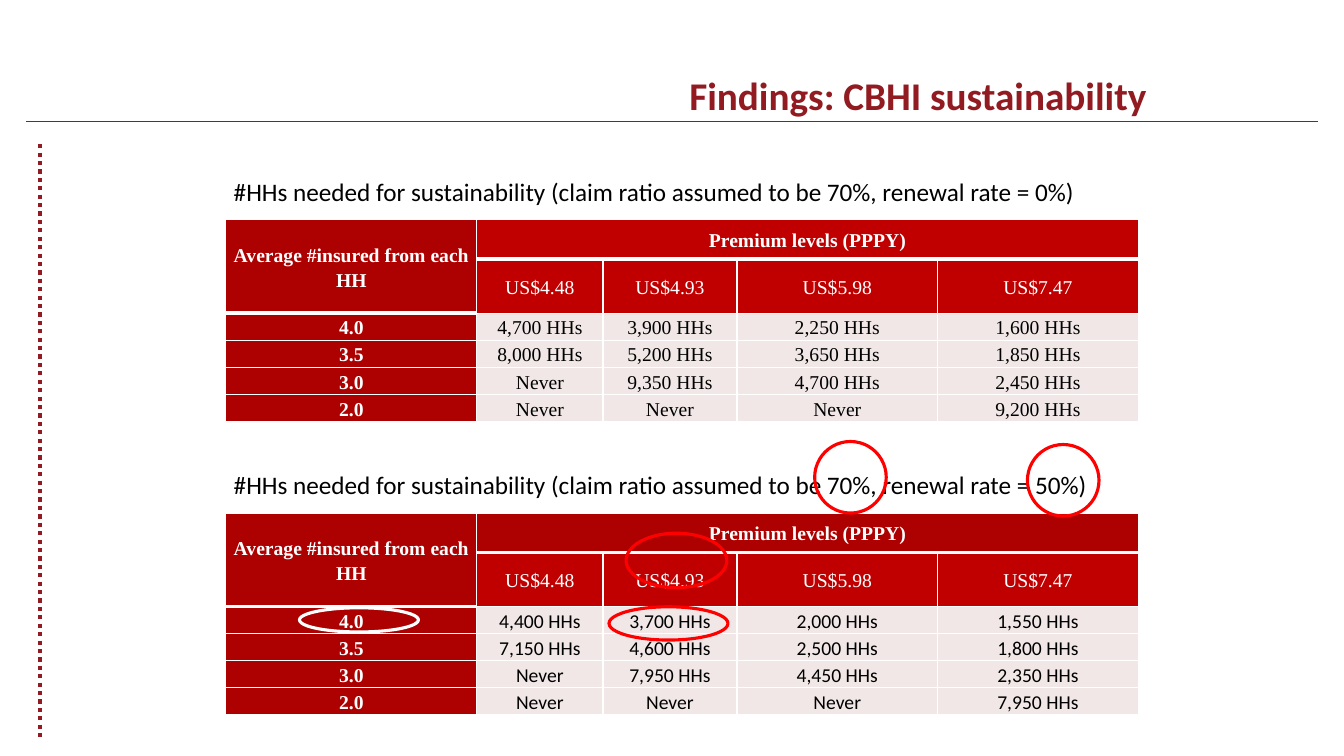
import pptx
import pptx.dml.color
import pptx.enum.dml
import pptx.enum.shapes
import pptx.enum.text
import pptx.oxml
import pptx.oxml.ns
import pptx.oxml.xmlchemy
import pptx.util

Inches = pptx.util.Inches
Pt = pptx.util.Pt
ALIGN = pptx.enum.text.PP_ALIGN
MIDDLE = pptx.enum.text.MSO_ANCHOR.MIDDLE

COLORS = {
    "title": "921B21",
    "label": "AD0101",
    "header": "C00000",
    "body": "F1E7E7",
    "white": "FFFFFF",
    "black": "000000",
    "mark": "FF0000",
}
COLUMN_WIDTHS = [2.49, 1.25, 1.33, 1.99, 1.99]
ROW_HEIGHTS = [0.39, 0.28] + [0.2] * 4
PREMIUMS = ["US$4.48", "US$4.93", "US$5.98", "US$7.47"]
NO_RENEWAL_ROWS = [
    ["4.0", "4,700 HHs", "3,900 HHs", "2,250 HHs", "1,600 HHs"],
    ["3.5", "8,000 HHs", "5,200 HHs", "3,650 HHs", "1,850 HHs"],
    ["3.0", "Never", "9,350 HHs", "4,700 HHs", "2,450 HHs"],
    ["2.0", "Never", "Never", "Never", "9,200 HHs"],
]
HALF_RENEWAL_ROWS = [
    ["4.0", "4,400 HHs", "3,700 HHs", "2,000 HHs", "1,550 HHs"],
    ["3.5", "7,150 HHs", "4,600 HHs", "2,500 HHs", "1,800 HHs"],
    ["3.0", "Never", "7,950 HHs", "4,450 HHs", "2,350 HHs"],
    ["2.0", "Never", "Never", "Never", "7,950 HHs"],
]


def rgb(name):
    return pptx.dml.color.RGBColor.from_string(COLORS[name])


def set_font(paragraph, name, size, color, bold=False):
    paragraph.font.name = name
    paragraph.font.size = Pt(size)
    paragraph.font.color.rgb = rgb(color)
    paragraph.font.bold = bold


def add_rule(slide, start, end, width, dash=None):
    rule = slide.shapes.add_connector(
        pptx.enum.shapes.MSO_CONNECTOR.STRAIGHT,
        *[Inches(value) for value in start + end])
    rule.line.color.rgb = rgb("title")
    rule.line.width = Pt(width)
    if dash is not None:
        rule.line.dash_style = dash
    rule._element.spPr.append(pptx.oxml.xmlchemy.OxmlElement("a:effectLst"))


def add_title(slide, left, top, width, height):
    title = slide.shapes.title
    title.left, title.top = Inches(left), Inches(top)
    title.width, title.height = Inches(width), Inches(height)
    title.text_frame.text = "Findings: CBHI sustainability"
    title.text_frame.vertical_anchor = pptx.enum.text.MSO_ANCHOR.BOTTOM
    paragraph = title.text_frame.paragraphs[0]
    paragraph.alignment = ALIGN.RIGHT
    set_font(paragraph, "Calibri", 28, "title", True)


def set_borders(cell, top, bottom):
    widths = {"a:lnL": 1, "a:lnR": 1, "a:lnT": top, "a:lnB": bottom}
    properties = cell._tc.get_or_add_tcPr()
    for position, (tag, width) in enumerate(widths.items()):
        border = pptx.oxml.parse_xml(
            f'<{tag} {pptx.oxml.ns.nsdecls("a")} w="{Pt(width)}"><a:solidFill>'
            f'<a:srgbClr val="{COLORS["white"]}"/></a:solidFill></{tag}>')
        properties.insert(position, border)


def format_cell(cell, text, fill, font_name, color, bold):
    cell.text = text
    cell.vertical_anchor = MIDDLE
    cell.margin_left = cell.margin_right = Inches(0.07)
    cell.margin_top = cell.margin_bottom = 0
    cell.fill.solid()
    cell.fill.fore_color.rgb = rgb(fill)
    paragraph = cell.text_frame.paragraphs[0]
    paragraph.alignment = ALIGN.CENTER
    paragraph.line_spacing = 1.15
    set_font(paragraph, font_name, 14, color, bold)


def add_premium_table(slide, left, top, data_rows, premium_fill, data_font):
    rows = [["Average #insured from each HH", "Premium levels (PPPY)", "", "", ""],
            [""] + PREMIUMS] + data_rows
    frame = slide.shapes.add_table(
        len(rows), len(COLUMN_WIDTHS), Inches(left), Inches(top),
        Inches(sum(COLUMN_WIDTHS)), Inches(1.74))
    table = frame.table
    for column, width in zip(table.columns, COLUMN_WIDTHS):
        column.width = Inches(width)
    for row, height in zip(table.rows, ROW_HEIGHTS):
        row.height = Inches(height)
    frame.height = Inches(1.74)

    for r, values in enumerate(rows):
        for c, text in enumerate(values):
            cell = table.cell(r, c)
            if c == 0:
                format_cell(cell, text, "label", "Times New Roman", "white", True)
            elif r < 2:
                fill = premium_fill if r == 0 else "header"
                format_cell(cell, text, fill, "Times New Roman", "white", r == 0)
            else:
                format_cell(cell, text, "body", data_font, "black", False)
            # Thick rule under each merged heading
            heading_end = 1 if c == 0 else 0
            set_borders(cell, 3 if r == heading_end + 1 else 1,
                        3 if r <= heading_end else 1)
    table.cell(0, 0).merge(table.cell(1, 0))
    table.cell(0, 1).merge(table.cell(0, 4))


def add_scenario(slide, left, top, width, renewal, data_rows, premium_fill, data_font):
    caption = slide.shapes.add_textbox(
        Inches(left), Inches(top), Inches(width), Inches(0.47))
    caption.text_frame.word_wrap = True
    paragraph = caption.text_frame.paragraphs[0]
    paragraph.text = ("#HHs needed for sustainability (claim ratio assumed to be 70%, "
                      f"renewal rate = {renewal})")
    set_font(paragraph, "Calibri", 18, "black")
    add_premium_table(slide, left + 0.02, top + 0.48, data_rows, premium_fill, data_font)


def add_highlights(slide, left, top):
    highlights = [
        (5.86, -0.23, 0.71, 0.71, "mark"),  # claim ratio
        (7.97, -0.2, 0.71, 0.71, "mark"),  # renewal rate
        (3.99, 0.68, 1, 0.54, "mark"),  # premium
        (3.82, 1.41, 1.18, 0.33, "mark"),  # households needed
        (0.75, 1.42, 1.18, 0.24, "white"),  # average insured
    ]
    for x, y, width, height, color in highlights:
        ellipse = slide.shapes.add_shape(
            pptx.enum.shapes.MSO_SHAPE.OVAL, Inches(left + x), Inches(top + y),
            Inches(width), Inches(height))
        ellipse.shadow.inherit = False
        ellipse.fill.background()
        ellipse.line.color.rgb = rgb(color)
        ellipse.line.width = Pt(2.25)


def main():
    presentation = pptx.Presentation()
    presentation.slide_width = Inches(13.33)
    presentation.slide_height = Inches(7.5)
    slide = presentation.slides.add_slide(presentation.slide_layouts[5])

    # Frame lines and title
    add_rule(slide, (0.26, 1.21), (13.07, 1.21), 0.75)
    add_rule(slide, (0.4, 1.43), (0.4, 7.34), 3,
             pptx.enum.dml.MSO_LINE.ROUND_DOT)
    add_title(slide, 4.23, 0.28, 7.24, 0.94)

    # Two renewal scenarios, the second with its key figures ringed
    add_scenario(slide, 2.22, 1.7, 8.7, "0%", NO_RENEWAL_ROWS,
                 "header", "Times New Roman")
    add_scenario(slide, 2.22, 4.61, 8.86, "50%", HALF_RENEWAL_ROWS,
                 "label", "Calibri")
    add_highlights(slide, 2.22, 4.61)

    presentation.save("out.pptx")


if __name__ == "__main__":
    main()
